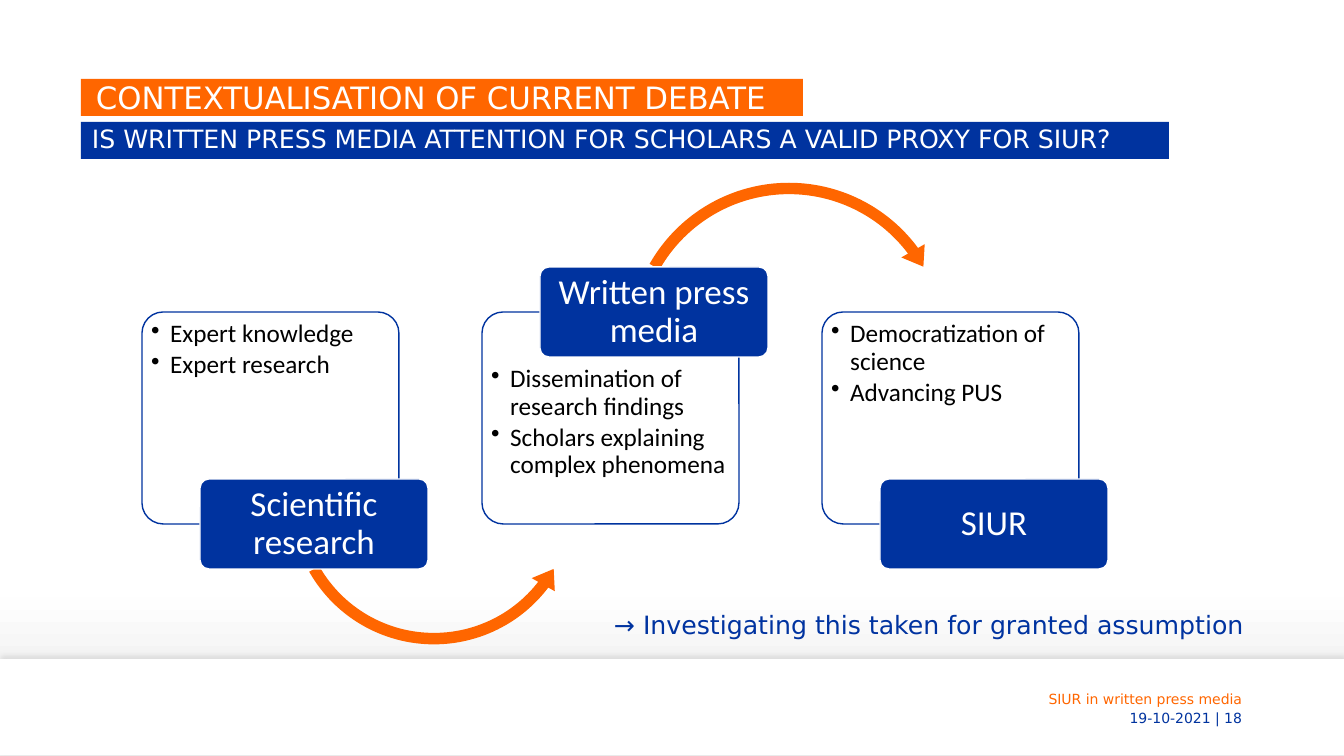
from copy import deepcopy
from lxml.etree import SubElement
from pptx import Presentation
from pptx.dml.color import RGBColor
from pptx.enum.shapes import MSO_SHAPE as SHAPE
from pptx.enum.text import MSO_ANCHOR as ANCHOR, PP_ALIGN as ALIGN
from pptx.oxml.ns import qn
from pptx.util import Pt

WHITE = RGBColor(0xFF, 0xFF, 0xFF)
NEAR_WHITE = RGBColor(0xFE, 0xFE, 0xFE)
GREY = RGBColor(0xED, 0xED, 0xED)
BLACK = RGBColor(0x00, 0x00, 0x00)
BLUE = RGBColor(0x00, 0x33, 0x9F)
NOTE_BLUE = RGBColor(0x00, 0x33, 0xA0)
ORANGE = RGBColor(0xFF, 0x66, 0x00)
SANS, CALIBRI = "DejaVu Sans", "Calibri"


def px(length):
    return round(length * 914400 / 100.8)


def add_block(kind, area, fill, line=None):
    block = page.shapes.add_shape(kind, *map(px, area))
    block.shadow.inherit = False
    block.fill.solid()
    block.fill.fore_color.rgb = fill
    if line is None:
        block.line.fill.background()
    else:
        block.line.color.rgb = line
        block.line.width = Pt(1)
    return block


def write(box, lines, font, size, color, insets=(10, 5, 10, 5), anchor=ANCHOR.TOP,
          align=ALIGN.LEFT, spacing=1.0, indent=0, bullet=None):
    frame = box.text_frame
    frame.word_wrap = True
    frame.vertical_anchor = anchor
    for side, inset in zip(("left", "top", "right", "bottom"), insets):
        setattr(frame, "margin_" + side, px(inset))
    for index, line in enumerate(lines):
        para = frame.add_paragraph() if index else frame.paragraphs[0]
        para.alignment = align
        para.line_spacing = spacing
        properties = para._p.get_or_add_pPr()
        properties.set("marL", str(px(indent)))
        if bullet:
            para.space_after = Pt(2.7)
            properties.set("indent", str(-px(indent)))
            SubElement(properties, qn("a:buChar"), char=bullet)
        span = para.add_run()
        span.text = line
        for name, value in {"name": font, "size": Pt(size)}.items():
            setattr(span.font, name, value)
        span.font.color.rgb = color


deck = Presentation()
deck.slide_width, deck.slide_height = px(1344), px(756)
page = deck.slides.add_slide(deck.slide_layouts[6])

# Background gradient
backdrop = page.background.fill
backdrop.gradient()
backdrop.gradient_angle = 270
stop_list = page._element.find(".//" + qn("a:gsLst"))
stop_list.append(deepcopy(stop_list[-1]))
for stop, (position, color) in zip(backdrop.gradient_stops,
                                   ((0, WHITE), (0.79, NEAR_WHITE), (0.92, GREY))):
    stop.position = position
    stop.color.rgb = color

# Footer band with a shadow above it
band = add_block(SHAPE.RECTANGLE, (0, 659, 1344, 96), WHITE)
shadow = SubElement(band._element.spPr.find(qn("a:effectLst")), qn("a:outerShdw"),
                    blurRad=str(Pt(4)), dist=str(Pt(3)), dir="16200000", rotWithShape="0")
shade = SubElement(shadow, qn("a:srgbClr"), val="000000")
SubElement(shade, qn("a:alpha"), val="10000")

for text, top, height, color in (("SIUR in written press media", 690, 17, ORANGE),
                                 ("19-10-2021 | 18", 708, 19, BLUE)):
    footer = page.shapes.add_textbox(*map(px, (950, top, 302, height)))
    write(footer, [text], SANS, 10, color, anchor=ANCHOR.MIDDLE, align=ALIGN.RIGHT)

# Subtitle and title bars
subtitle = add_block(SHAPE.RECTANGLE, (81, 122, 1088, 37), BLUE)
write(subtitle, ["IS WRITTEN PRESS MEDIA ATTENTION FOR SCHOLARS A VALID PROXY FOR SIUR?"],
      SANS, 18, WHITE, insets=(0, 4, 10, 4), spacing=0.95, indent=11)
title = add_block(SHAPE.RECTANGLE, (81, 79, 722, 37), ORANGE)
write(title, ["CONTEXTUALISATION OF CURRENT DEBATE"], SANS, 22, WHITE,
      insets=(0, 4, 16, 0), anchor=ANCHOR.BOTTOM, spacing=0.9, indent=15)

# Process: panel, arrow to the next step, label; the label sits above or below
lower_arrow = (SHAPE.LEFT_CIRCULAR_ARROW, (283, 350, 302, 302),
               (0.038, 4.72, 22.475, 90.245, 0.044))
upper_arrow = (SHAPE.CIRCULAR_ARROW, (621, 175, 336, 336),
               (0.034, 4.22, 194.025, 125.755, 0.04))
steps = (
    ("Scientific research", ["Expert knowledge", "Expert research"], 479, 3, lower_arrow),
    ("Written press media", ["Dissemination of research findings",
                             "Scholars explaining complex phenomena"], 267, 48, upper_arrow),
    ("SIUR", ["Democratization of science", "Advancing PUS"], 479, 3, None),
)
for number, (label, points, label_top, text_top, arrow) in enumerate(steps):
    left = 142 + 340 * number
    panel = add_block(SHAPE.ROUNDED_RECTANGLE, (left, 312, 257, 212), WHITE, BLUE)
    panel.adjustments[0] = 0.1
    panel_color = panel._element.spPr.find(qn("a:solidFill"))[0]
    SubElement(panel_color, qn("a:alpha"), val="90000")
    write(panel, points, CALIBRI, 18, BLACK, insets=(3, text_top, 3, 3),
          spacing=0.9, indent=19, bullet="•")
    if arrow:
        kind, area, bends = arrow
        curve = add_block(kind, area, ORANGE)
        for index, bend in enumerate(bends):
            curve.adjustments[index] = bend
    tag = add_block(SHAPE.ROUNDED_RECTANGLE, (left + 58, label_top, 228, 90), BLUE, WHITE)
    tag.adjustments[0] = 0.1
    write(tag, [label], CALIBRI, 25, WHITE, insets=(4, 3, 4, 3),
          anchor=ANCHOR.MIDDLE, align=ALIGN.CENTER, spacing=0.9)

# Closing remark
remark = page.shapes.add_textbox(*map(px, (604, 604, 659, 40)))
write(remark, ["→ Investigating this taken for granted assumption"], SANS, 18, NOTE_BLUE)

deck.save("out.pptx")
